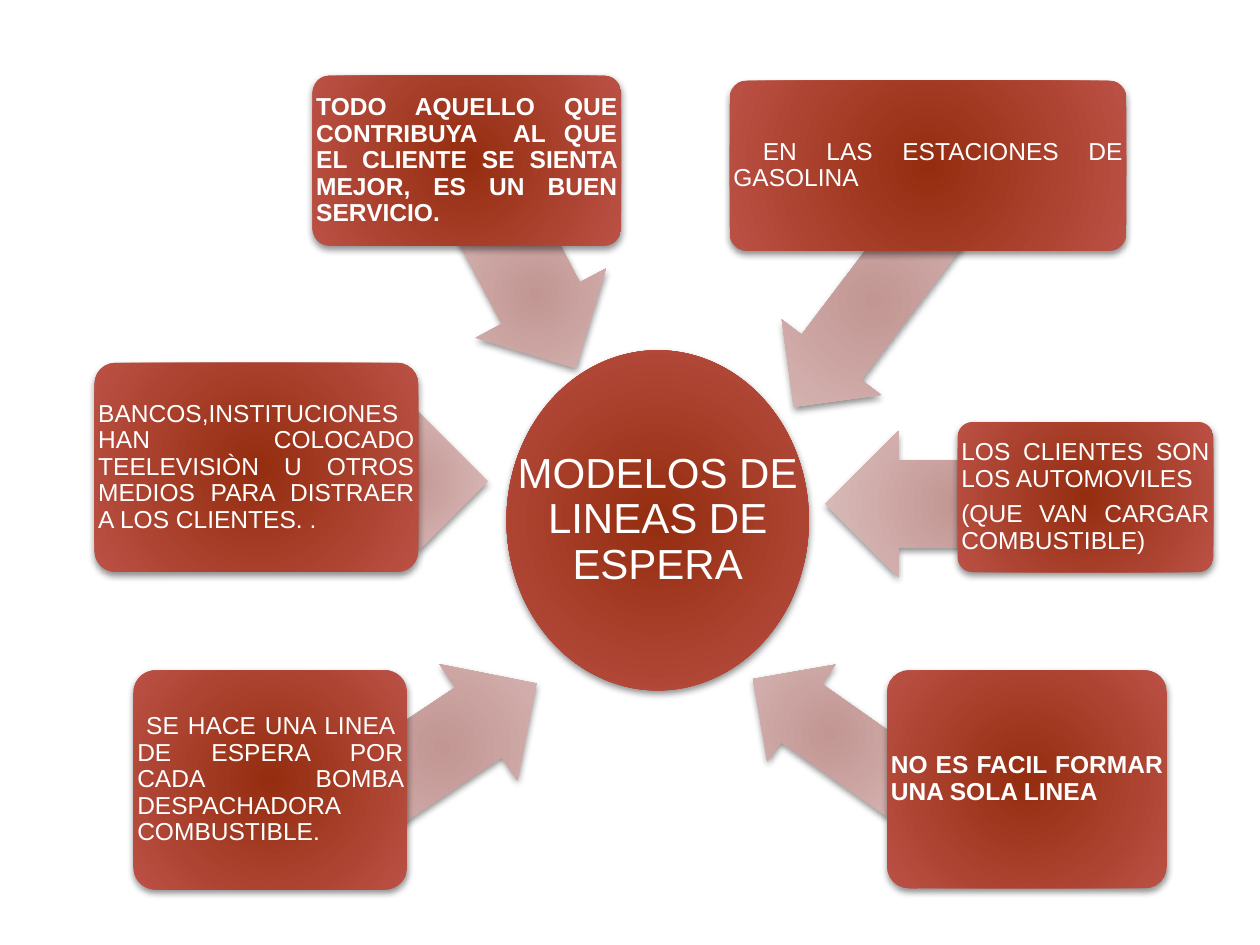
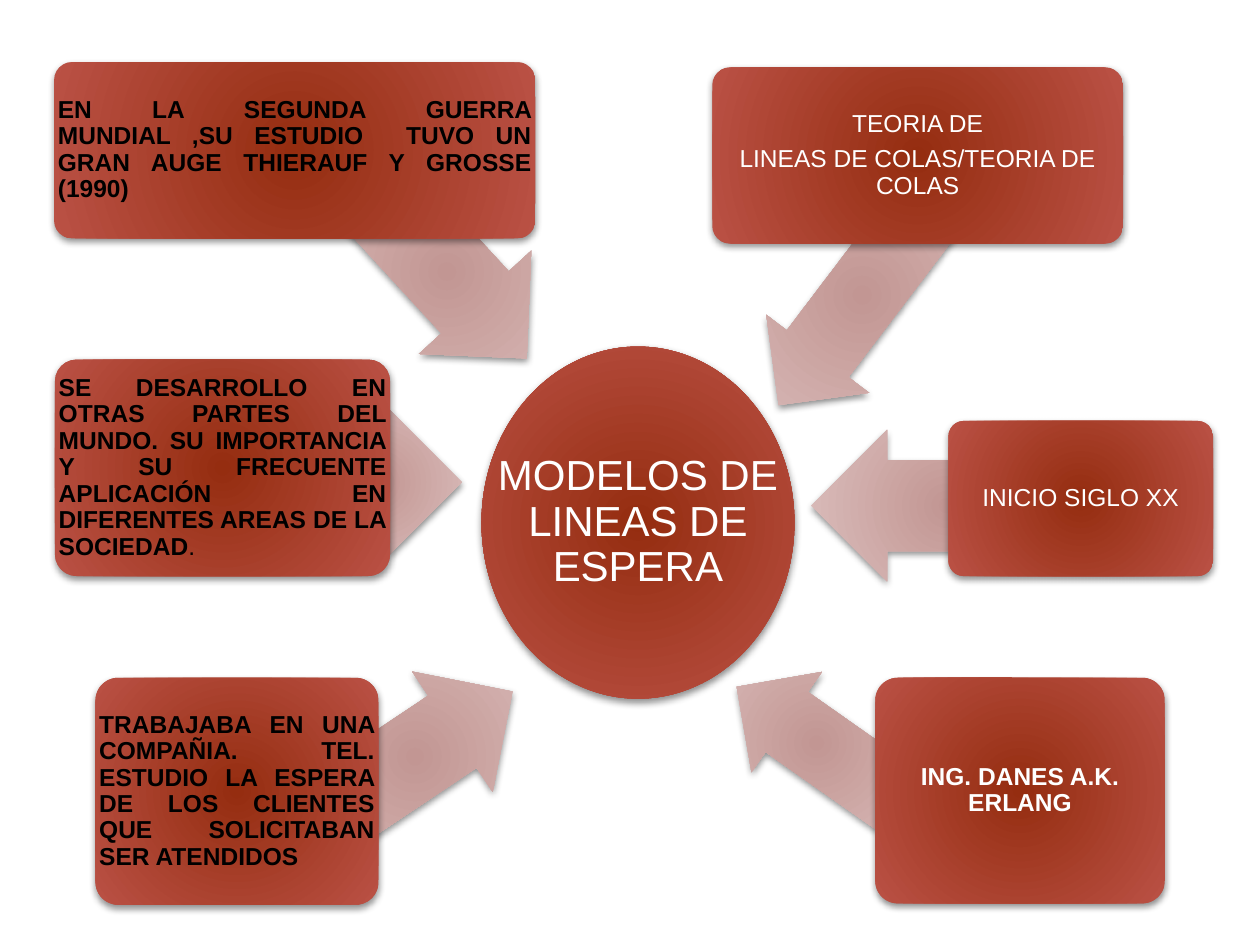
import pptx
import pptx.util
import pptx.dml.color
import pptx.enum.shapes
import pptx.enum.text
import pptx.oxml
import pptx.oxml.ns

RGB = pptx.dml.color.RGBColor
KIND = pptx.enum.shapes.MSO_SHAPE
ALIGN = pptx.enum.text.PP_ALIGN

WHITE = RGB(0xFF, 0xFF, 0xFF)
BLACK = RGB(0x00, 0x00, 0x00)
RUST = (RGB(0x95, 0x2D, 0x10), RGB(0xBA, 0x51, 0x45))
ROSE = (RGB(0xC2, 0x96, 0x93), RGB(0xDB, 0xBE, 0xBC))

WIDE, HIGH = pptx.util.Inches(10), pptx.util.Inches(7.5)
COLS, ROWS = 100, 75
BOX_COLS, BOX_ROWS = 90, 65

NS = pptx.oxml.ns.nsdecls("a")
GLOW = (
    f'<a:path {NS} path="circle">'
    '<a:fillToRect l="40000" t="100000" r="40000" b="100000"/></a:path>'
)
SHADE = (
    f'<a:outerShdw {NS} blurRad="50800" dist="25400" dir="5040000" rotWithShape="0">'
    '<a:srgbClr val="000000"><a:alpha val="44000"/></a:srgbClr></a:outerShdw>'
)

HUB = (33.2, 21.8, 24, 27)
SPOTS = {
    "low left": ((19.1, 47.7, 18, 11.1), 146.2, (3.6, 47.2, 21.7, 17.4)),
    "left": ((18.9, 26.6, 12.8, 11.2), 180, (0.5, 22.8, 25.7, 16.6)),
    "top left": ((28.9, 11.5, 13.3, 11.7), 242, (17.8, 0, 24.5, 13.5)),
    "top right": ((51.8, 12.9, 21.2, 9.9), 307.2, (50.9, 0.4, 31.5, 13.5)),
    "right": ((58.5, 28.2, 20.7, 11.6), 0, (69, 27.5, 20.3, 11.9)),
    "low right": ((51.4, 47.5, 15, 9.4), 35.1, (63.4, 47.2, 22.2, 17.3)),
}
BROAD = {"top left": ((21.5, 10.2, 18.1, 11.7), 227.4, (0.43, 0, 36.9, 13.5))}

PLAIN = {"align": ALIGN.JUSTIFY, "size": 14, "inset": 0.03, "color": WHITE, "bold": False}
BOLD = PLAIN | {"bold": True}
DARK = BOLD | {"color": BLACK}
MID = PLAIN | {"align": ALIGN.CENTER}
MID_BOLD = MID | {"bold": True}
TITLE = MID | {"size": 24, "inset": 0.02}

USES = {
    "low left": (PLAIN, ["SE HACE UNA LINEA  DE ESPERA POR CADA  BOMBA DESPACHADORA COMBUSTIBLE."]),
    "left": (PLAIN, ["BANCOS,INSTITUCIONES  HAN COLOCADO TEELEVISIÒN U OTROS MEDIOS "
                     "PARA DISTRAER A LOS CLIENTES. ."]),
    "top left": (BOLD, ["TODO AQUELLO QUE CONTRIBUYA  AL QUE EL CLIENTE SE SIENTA MEJOR, "
                        "ES UN BUEN SERVICIO."]),
    "top right": (PLAIN, [" EN LAS ESTACIONES DE GASOLINA"]),
    "right": (PLAIN, ["LOS CLIENTES SON LOS AUTOMOVILES", "(QUE VAN CARGAR COMBUSTIBLE)"]),
    "low right": (BOLD, ["NO ES FACIL FORMAR UNA SOLA LINEA"]),
}
USES["low left"][1][0] = " " + USES["low left"][1][0]
PAST = {
    "low left": (DARK, ["TRABAJABA EN UNA COMPAÑIA. TEL. ESTUDIO LA ESPERA DE LOS CLIENTES "
                        "QUE SOLICITABAN SER ATENDIDOS"]),
    "left": (DARK, [("SE DESARROLLO EN OTRAS PARTES DEL MUNDO. SU IMPORTANCIA Y SU FRECUENTE "
                     "APLICACIÓN EN DIFERENTES AREAS DE LA SOCIEDAD", ".")]),
    "top left": (DARK, ["EN LA SEGUNDA GUERRA MUNDIAL ,SU ESTUDIO  TUVO UN GRAN AUGE "
                        "THIERAUF Y GROSSE (1990)"]),
    "top right": (MID, ["TEORIA DE", "LINEAS DE COLAS/TEORIA DE COLAS"]),
    "right": (MID, ["INICIO SIGLO XX"]),
    "low right": (MID_BOLD, ["ING. DANES A.K. ERLANG"]),
}


def place(box, part):
    """Turn a part, in grid units of its box, into slide lengths."""
    left, top, width, height = box
    x, y, w, h = part
    col, row = width / BOX_COLS, height / BOX_ROWS
    cells = (left + x * col, top + y * row, w * col, h * row)
    units = (WIDE / COLS, HIGH / ROWS) * 2
    return [round(cell * unit) for cell, unit in zip(cells, units)]


def paint(slide, kind, spot, tones, bends=(), turn=0):
    """Add a shape with a round gradient and a soft shadow."""
    shape = slide.shapes.add_shape(kind, *spot)
    shape.rotation = turn
    for slot, bend in enumerate(bends):
        shape.adjustments[slot] = bend
    shape.line.fill.background()
    shape.fill.gradient()
    for stop, tone in zip(shape.fill.gradient_stops, tones):
        stop.color.rgb = tone
    props = shape._element.spPr
    grad = props.find(pptx.oxml.ns.qn("a:gradFill"))
    grad.replace(grad.find(pptx.oxml.ns.qn("a:lin")), pptx.oxml.parse_xml(GLOW))
    shape.shadow.inherit = False
    props.find(pptx.oxml.ns.qn("a:effectLst")).append(pptx.oxml.parse_xml(SHADE))


def write(slide, spot, style, lines):
    """Lay text over a shape; the second run of a line is not bold."""
    frame = slide.shapes.add_textbox(*spot).text_frame
    frame.word_wrap = True
    frame.vertical_anchor = pptx.enum.text.MSO_ANCHOR.MIDDLE
    for side in ("left", "top", "right", "bottom"):
        setattr(frame, f"margin_{side}", pptx.util.Inches(style["inset"]))
    size = style["size"]
    form = {"alignment": style["align"], "line_spacing": 0.9,
            "space_after": pptx.util.Pt(round(size * 0.35))}
    for count, line in enumerate(lines):
        para = frame.add_paragraph() if count else frame.paragraphs[0]
        for name, value in form.items():
            setattr(para, name, value)
        texts = (line,) if isinstance(line, str) else line
        for order, text in enumerate(texts):
            run = para.add_run()
            run.text = text
            face = {"name": "Arial", "size": pptx.util.Pt(size),
                    "bold": style["bold"] and not order}
            for name, value in face.items():
                setattr(run.font, name, value)
            run.font.color.rgb = style["color"]


def branch(slide, box, spot, note):
    """Draw an arrow to the hub and the card it leaves from."""
    arrow, turn, card = spot
    paint(slide, KIND.LEFT_ARROW, place(box, arrow), ROSE, (0.6, 0.5), turn)
    paint(slide, KIND.ROUNDED_RECTANGLE, place(box, card), RUST, (0.1,))
    write(slide, place(box, card), *note)


def wheel(deck, box, spots, notes):
    """Add a slide with the hub and its six branches."""
    slide = deck.slides.add_slide(deck.slide_layouts[6])
    hub = place(box, HUB)
    paint(slide, KIND.OVAL, hub, RUST)
    write(slide, hub, TITLE, ["MODELOS DE LINEAS DE ESPERA"])
    for name, spot in spots.items():
        branch(slide, box, spot, notes[name])


def main():
    """Build and save the deck."""
    deck = pptx.Presentation()
    deck.slide_width, deck.slide_height = WIDE, HIGH
    wheel(deck, (7, 6, 90, 65), SPOTS, USES)
    wheel(deck, (3.85, 4.94, 93.15, 67.28), SPOTS | BROAD, PAST)
    deck.save("out.pptx")


if __name__ == "__main__":
    main()
